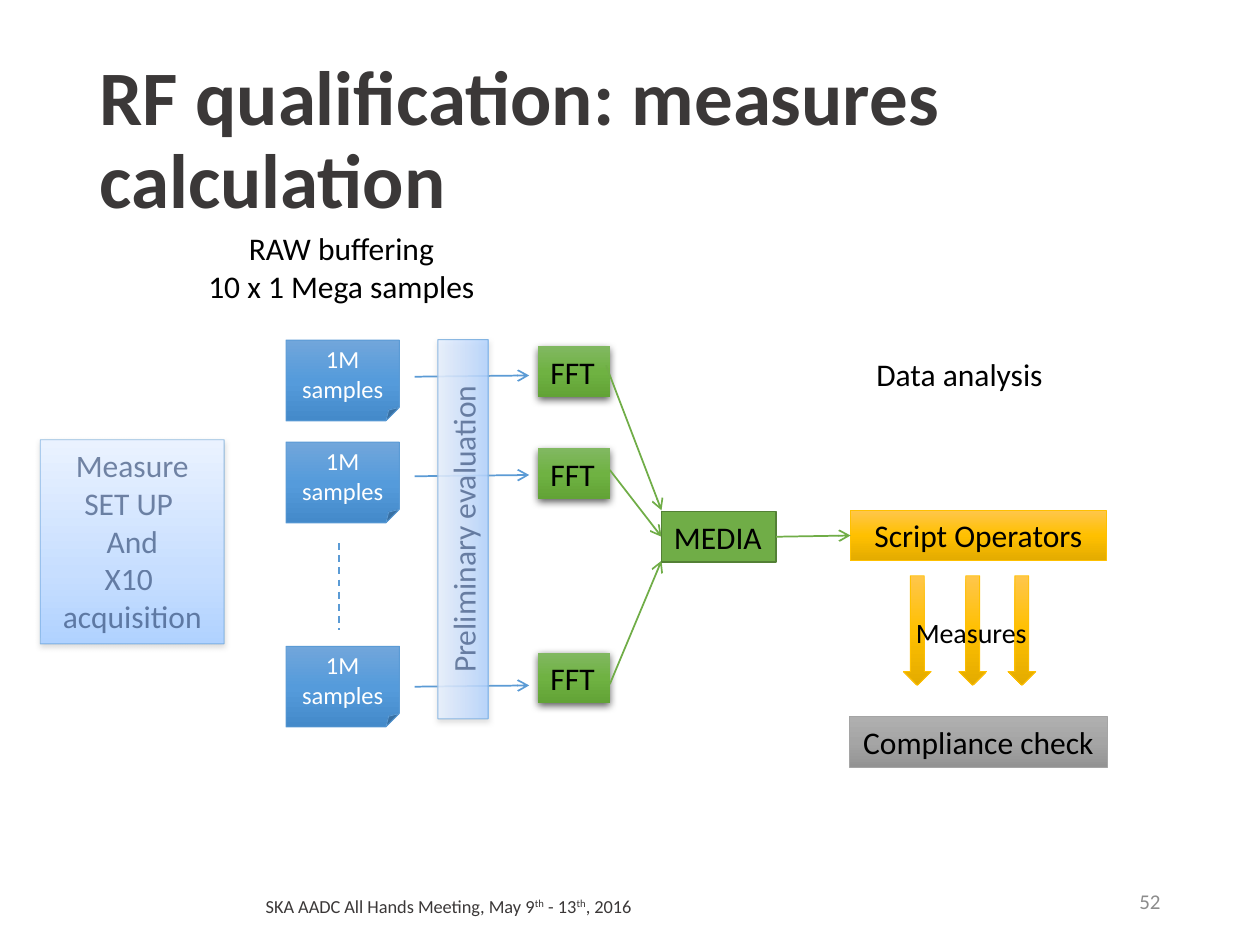
from dataclasses import dataclass

from lxml.etree import SubElement
from pptx import Presentation
from pptx.dml.color import RGBColor
from pptx.enum.dml import MSO_LINE_DASH_STYLE as Dash
from pptx.enum.shapes import MSO_CONNECTOR as Connector, MSO_SHAPE as Shape
from pptx.enum.text import MSO_ANCHOR as Anchor, MSO_AUTO_SIZE as AutoSize, PP_ALIGN as Align
from pptx.oxml.ns import qn
from pptx.util import Inches, Pt


@dataclass(frozen=True)
class Theme:
    font: str = "Calibri"
    title_size: float = 44
    body_size: float = 18
    measures_size: float = 16
    sample_size: float = 14
    number_size: float = 12
    footer_size: float = 10.5
    heading: str = "3B3838"
    black: str = "000000"
    white: str = "FFFFFF"
    number: str = "8C8C8C"
    faded_text: str = "203864"
    blue: str = "5B9BD5"
    green: str = "70AD47"
    green_edge: str = "538035"
    gold: str = "FFC000"
    grey: str = "A5A5A5"
    pale_edge: str = "5698D3"
    # Gradients: (position, colour) stops
    blue_fill: tuple = ((0, "71A6DB"), (50, "559BDB"), (100, "448ACA"))
    green_fill: tuple = ((0, "81B861"), (50, "6FB242"), (100, "62A336"))
    gold_fill: tuple = ((0, "FFC64B"), (50, "FFC000"), (100, "E3AB00"))
    grey_fill: tuple = ((0, "AFAFAF"), (50, "A5A5A5"), (100, "939393"))
    pale_fill: tuple = ((0, "B0D2FF"), (35, "C7DEFF"), (100, "EAF2FF"))
    # Shadows: colour, opacity, blur, distance
    dark_shadow: tuple = ("000000", 63, 4.5, 1.5)
    soft_shadow: tuple = ("A6A6A6", 38, 3.1, 1.6)


THEME = Theme()


def set_alpha(color, percent):
    SubElement(color, qn("a:alpha"), val=str(percent * 1000))


def write_text(shape, text, size=THEME.body_size, color=THEME.black, bold=False, alpha=None,
               align=Align.LEFT, anchor=Anchor.TOP, wrap=False, grow=True, spacing=None):
    """Fill a shape with lines of text; parts between ^ marks are superscript."""
    frame = shape.text_frame
    frame.word_wrap = wrap
    frame.auto_size = AutoSize.SHAPE_TO_FIT_TEXT if grow else AutoSize.NONE
    frame.vertical_anchor = anchor
    for row, line in enumerate(text.split("\n")):
        paragraph = frame.add_paragraph() if row else frame.paragraphs[0]
        paragraph.alignment = align
        if spacing:
            paragraph.line_spacing = spacing
        for index, part in enumerate(line.split("^")):
            run = paragraph.add_run()
            run.text = part
            font = run.font
            font.name, font.size, font.bold = THEME.font, Pt(size), bold
            font.color.rgb = RGBColor.from_string(color)
            properties = run._r.get_or_add_rPr()
            if index % 2:
                properties.set("baseline", "30000")
            if alpha:
                set_alpha(next(properties.iter(qn("a:srgbClr"))), alpha)


def add_label(slide, box, text, **text_format):
    label = slide.shapes.add_textbox(*map(Inches, box))
    write_text(label, text, **text_format)


def fill_gradient(shape, stops, angle, alpha):
    shape.fill.gradient()
    gradient = shape._element.spPr.find(qn("a:gradFill"))
    for child in list(gradient):
        gradient.remove(child)
    gradient.set("rotWithShape", "1")
    stop_list = SubElement(gradient, qn("a:gsLst"))
    for position, color in stops:
        stop = SubElement(stop_list, qn("a:gs"), pos=str(position * 1000))
        stop_color = SubElement(stop, qn("a:srgbClr"), val=color)
        if alpha:
            set_alpha(stop_color, alpha)
    SubElement(gradient, qn("a:lin"), ang=str(angle * 60000), scaled="0")


def cast_shadow(shape, color, alpha, blur, distance):
    effects = shape._element.spPr.find(qn("a:effectLst"))
    shadow = SubElement(effects, qn("a:outerShdw"), blurRad=str(Pt(blur)), dist=str(Pt(distance)),
                        dir="5400000", algn="ctr", rotWithShape="0")
    set_alpha(SubElement(shadow, qn("a:srgbClr"), val=color), alpha)


def add_block(slide, box, fill, edge=None, kind=Shape.RECTANGLE, text=None, edge_width=0.5,
              edge_alpha=None, angle=90, fill_alpha=None, shadow=None, rotation=0, **text_format):
    block = slide.shapes.add_shape(kind, *map(Inches, box))
    block.rotation = rotation
    if isinstance(fill, str):
        block.fill.solid()
        block.fill.fore_color.rgb = RGBColor.from_string(fill)
    else:
        fill_gradient(block, fill, angle, fill_alpha)
    if edge:
        block.line.color.rgb = RGBColor.from_string(edge)
        block.line.width = Pt(edge_width)
        if edge_alpha:
            set_alpha(next(block.line._ln.iter(qn("a:srgbClr"))), edge_alpha)
    else:
        block.line.fill.background()
    block.shadow.inherit = False
    if shadow:
        cast_shadow(block, *shadow)
    if text:
        write_text(block, text, **text_format)


def add_link(slide, start, end, color, arrow=True, dash=None):
    link = slide.shapes.add_connector(Connector.STRAIGHT, *map(Inches, (*start, *end)))
    link.line.color.rgb = RGBColor.from_string(color)
    link.line.width = Pt(1)
    if dash:
        link.line.dash_style = dash
    if arrow:
        SubElement(link.line._ln, qn("a:tailEnd"), type="arrow")
    SubElement(link._element.spPr, qn("a:effectLst"))


def add_title_and_footer(slide):
    title = slide.shapes.title
    title.left, title.top, title.width, title.height = map(Inches, (0.69, 0.4, 8.62, 1.45))
    write_text(title, "RF qualification: measures calculation", size=THEME.title_size,
               color=THEME.heading, bold=True, anchor=Anchor.MIDDLE, wrap=True, grow=False,
               spacing=0.9)
    add_label(slide, (1.6, 6.99, 3.92, 0.4),
              "SKA AADC All Hands Meeting, May 9^th^ - 13^th^, 2016",
              size=THEME.footer_size, color=THEME.heading, align=Align.CENTER,
              anchor=Anchor.MIDDLE, wrap=True, grow=False)
    add_label(slide, (7.06, 6.95, 2.25, 0.4), "52", size=THEME.number_size, color=THEME.number,
              align=Align.RIGHT, anchor=Anchor.MIDDLE, wrap=True, grow=False)


def add_acquisition(slide, sample_tops):
    add_label(slide, (1.54, 1.77, 2.34, 0.71), "RAW buffering\n10 x 1 Mega samples",
              align=Align.CENTER)
    for top in sample_tops:
        add_block(slide, (2.27, top, 0.9, 0.64), THEME.blue_fill, THEME.blue, Shape.FOLDED_CORNER,
                  "1M samples", size=THEME.sample_size, color=THEME.white, align=Align.CENTER,
                  anchor=Anchor.MIDDLE, wrap=True, grow=False)
    add_link(slide, (2.69, 4.31), (2.69, 5), THEME.blue, arrow=False, dash=Dash.DASH)


def add_transforms(slide, sample_tops, arrow_starts, media_entries):
    for top, arrow_start, (start, end) in zip(sample_tops, arrow_starts, media_entries):
        add_block(slide, (4.27, top + 0.05, 0.57, 0.4), THEME.green_fill, text="FFT",
                  shadow=THEME.dark_shadow)
        add_link(slide, (3.29, arrow_start), (4.2, arrow_start - 0.01), THEME.blue)
        add_link(slide, start, end, THEME.green)
    add_block(slide, (5.25, 4.06, 0.91, 0.4), THEME.green, THEME.green_edge, text="MEDIA",
              edge_width=1)


def add_faded_stages(slide):
    faded = dict(edge=THEME.pale_edge, edge_alpha=61, angle=270, shadow=THEME.soft_shadow,
                 color=THEME.faded_text, alpha=59, align=Align.CENTER, wrap=True)
    add_block(slide, (0.32, 3.49, 1.46, 1.62), THEME.pale_fill,
              text="Measure\nSET UP \nAnd\nX10 \nacquisition", **faded)
    add_block(slide, (2.17, 4, 3.01, 0.4), THEME.pale_fill, text="Preliminary evaluation",
              fill_alpha=84, rotation=270, **faded)


def add_analysis(slide):
    add_label(slide, (6.84, 2.77, 1.55, 0.4), "Data analysis", align=Align.CENTER)
    add_block(slide, (6.75, 4.05, 2.03, 0.4), THEME.gold_fill, THEME.gold,
              text="Script Operators", align=Align.CENTER)
    add_link(slide, (6.16, 4.26), (6.75, 4.25), THEME.green)
    for left in (7.17, 7.61, 8):
        add_block(slide, (left, 4.57, 0.22, 0.87), THEME.gold_fill, THEME.gold, Shape.DOWN_ARROW)
    add_block(slide, (6.74, 5.69, 2.05, 0.4), THEME.grey_fill, THEME.grey,
              text="Compliance check", align=Align.CENTER)
    add_label(slide, (7.17, 4.84, 1.1, 0.37), "Measures", size=THEME.measures_size)


def main():
    deck = Presentation()
    deck.slide_width, deck.slide_height = Inches(10), Inches(7.5)
    slide = deck.slides.add_slide(deck.slide_layouts[5])

    sample_tops = (2.7, 3.51, 5.13)
    arrow_starts = (2.99, 3.78, 5.45)
    media_entries = (((4.81, 2.9), (5.25, 4.05)), ((4.84, 3.73), (5.25, 4.26)),
                     ((4.84, 5.43), (5.25, 4.45)))
    add_title_and_footer(slide)
    add_acquisition(slide, sample_tops)
    add_transforms(slide, sample_tops, arrow_starts, media_entries)
    add_faded_stages(slide)
    add_analysis(slide)
    deck.save("out.pptx")


if __name__ == "__main__":
    main()
